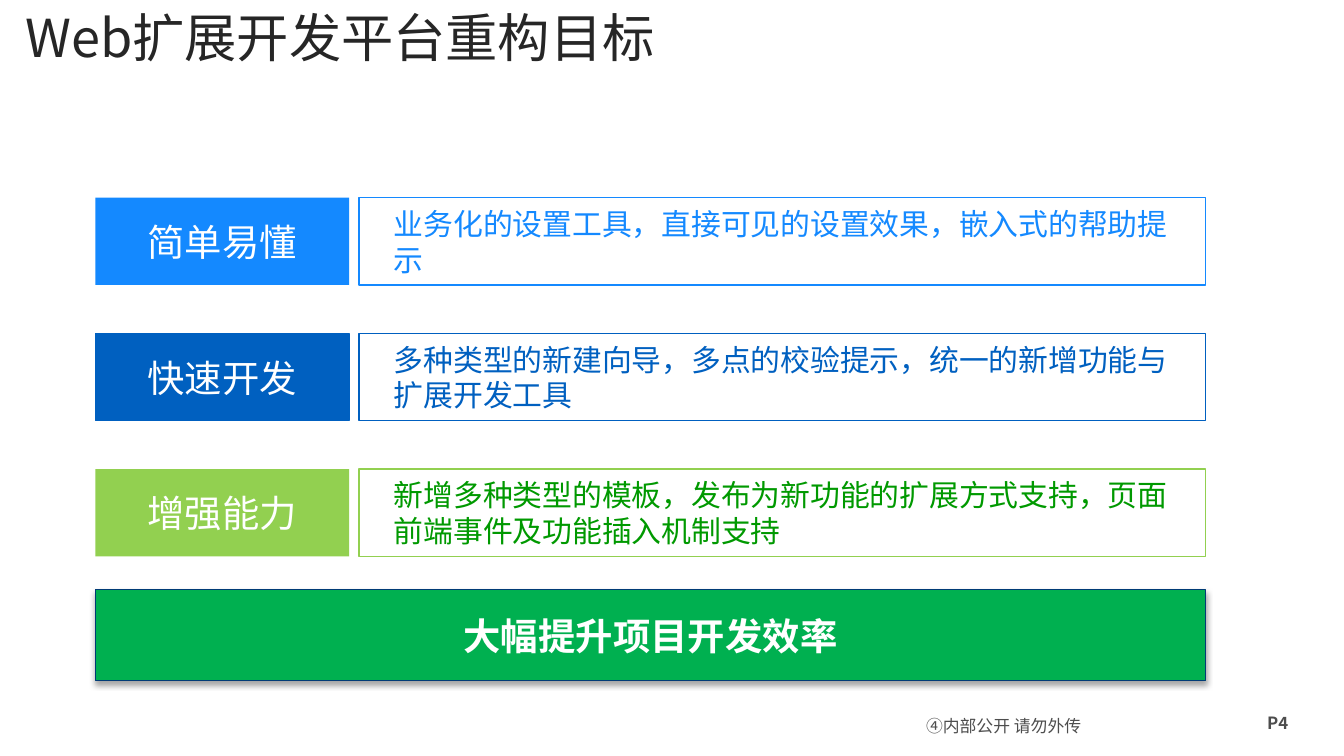
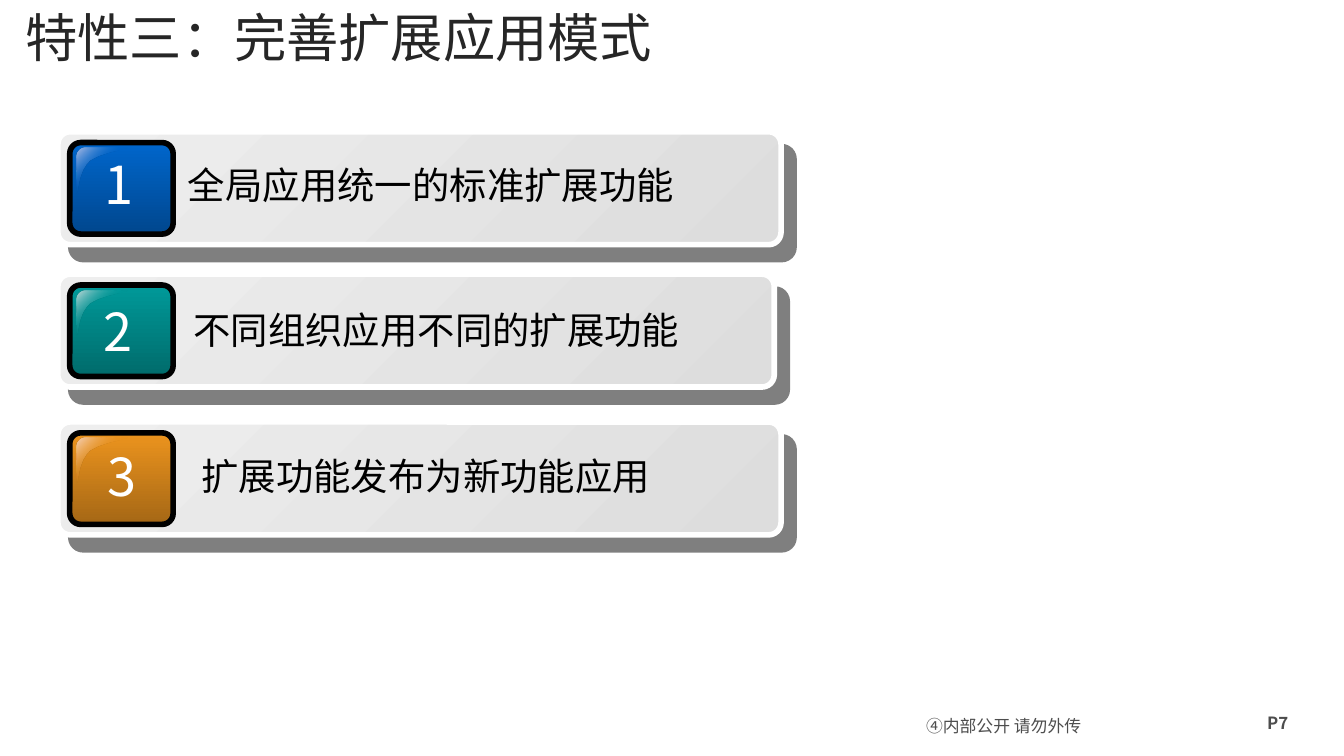
from lxml.etree import SubElement
from pptx import Presentation
from pptx.dml.color import RGBColor
from pptx.enum.shapes import MSO_SHAPE
from pptx.enum.text import MSO_ANCHOR, MSO_AUTO_SIZE, PP_ALIGN
from pptx.oxml.ns import qn
from pptx.util import Pt

FONT = "Noto Sans CJK SC"
COLORS = {
    "title": "262626", "footer": "4D4D4D", "white": "FFFFFF", "black": "000000",
    "sky": "1489FF", "blue": "0060C0", "lime": "92D050", "green": "009900",
    "banner": "00B050", "banner_edge": "003B76",
    "bar_light": "EEEEEE", "bar_dark": "DDDDDD",
    "one": "0066CC", "one_dark": "00478E", "one_gloss": "B5C0E5",
    "two": "009999", "two_dark": "006B6B", "two_gloss": "C9DBDB",
    "three": "EC941E", "three_dark": "A56715", "three_gloss": "F6D4BF",
}
FOOTER = "④内部公开 请勿外传"

GOALS_TITLE = "Web扩展开发平台重构目标"
GOALS = [
    ("简单易懂", "业务化的设置工具，直接可见的设置效果，嵌入式的帮助提示", "sky", "sky", None),
    ("快速开发", "多种类型的新建向导，多点的校验提示，统一的新增功能与扩展开发工具",
     "blue", "blue", "blue"),
    ("增强能力", "新增多种类型的模板，发布为新功能的扩展方式支持，页面前端事件及功能插入机制支持",
     "lime", "green", None),
]
GOALS_RESULT = "大幅提升项目开发效率"
GOAL_TOP, GOAL_STEP, GOAL_HEIGHT = 105.9, 72.7, 46.8

MODES_TITLE = "特性三：完善扩展应用模式"
MODES = [
    {"text": "全局应用统一的标准扩展功能", "color": "one", "top": 70.6, "width": 387.4,
     "number_box": (49, 7.2, 28.8, 41), "text_box": (93.6, 13)},
    {"text": "不同组织应用不同的扩展功能", "color": "two", "top": 146.9, "width": 383.8,
     "number_box": (48.2, 10.1, 35.3, 41), "text_box": (96.5, 14.4)},
    {"text": "扩展功能发布为新功能应用", "color": "three", "top": 226.1, "width": 387.4,
     "number_box": (50.4, 8.6, 25.9, 41), "text_box": (100.8, 13)},
]
GLOSS_START = (5, 0)
GLOSS_CURVES = [
    ((2.2, 0), (0, 2.2), (0, 5)),
    ((0, 11.5), (0, 18), (0, 24.5)),
    ((1.4, 25.2), (0.7, 13), (7.2, 7.2)),
    ((14.4, 2.2), (27.4, 1.4), (27.4, 0)),
]
CURVE_STEPS = 10


def rgb(name):
    return RGBColor.from_string(COLORS[name])


def write(shape, text, size, color, bold=False, align=PP_ALIGN.LEFT,
          anchor=MSO_ANCHOR.TOP, wrap=True, indent=0):
    frame = shape.text_frame
    frame.text = text
    frame.word_wrap = wrap
    frame.auto_size = MSO_AUTO_SIZE.NONE
    frame.vertical_anchor = anchor
    paragraph = frame.paragraphs[0]
    paragraph.alignment = align
    if indent:
        paragraph._p.get_or_add_pPr().set("marL", str(Pt(indent)))
    for run in paragraph.runs:
        run.font.size = Pt(size)
        run.font.bold = bold
        run.font.color.rgb = rgb(color)
        run.font.name = FONT
        SubElement(run._r.get_or_add_rPr(), qn("a:ea"), typeface=FONT)
    return paragraph


def add_text(slide, box, text, size, color, **options):
    shape = slide.shapes.add_textbox(*map(Pt, box))
    return shape, write(shape, text, size, color, **options)


def add_box(slide, box, fill=None, line=None, line_width=0.75,
            preset=MSO_SHAPE.RECTANGLE):
    shape = slide.shapes.add_shape(preset, *map(Pt, box))
    shape.shadow.inherit = False
    if fill:
        shape.fill.solid()
        shape.fill.fore_color.rgb = rgb(fill)
    else:
        shape.fill.background()
    if line:
        shape.line.color.rgb = rgb(line)
        shape.line.width = Pt(line_width)
    else:
        shape.line.fill.background()
    return shape


def set_gradient(shape, stops, angle):
    shape.fill.gradient()
    gradient = shape._element.spPr.find(qn("a:gradFill"))
    for child in list(gradient):
        gradient.remove(child)
    stop_list = SubElement(gradient, qn("a:gsLst"))
    for position, color, alpha in stops:
        stop = SubElement(stop_list, qn("a:gs"), pos=str(position * 1000))
        value = SubElement(stop, qn("a:srgbClr"), val=COLORS[color])
        if alpha < 100:
            SubElement(value, qn("a:alpha"), val=str(alpha * 1000))
    SubElement(gradient, qn("a:lin"), ang=str(angle * 60000), scaled="0")


def set_shadow(shape, alpha, blur, distance, angle):
    effects = shape._element.spPr.find(qn("a:effectLst"))
    shadow = SubElement(effects, qn("a:outerShdw"), blurRad=str(Pt(blur)),
                        dist=str(Pt(distance)), dir=str(angle * 60000),
                        algn="ctr", rotWithShape="0")
    value = SubElement(shadow, qn("a:srgbClr"), val=COLORS["black"])
    SubElement(value, qn("a:alpha"), val=str(alpha * 1000))


def add_slide(presentation, title, page):
    slide = presentation.slides.add_slide(presentation.slide_layouts[5])
    heading = slide.shapes.title
    heading.left, heading.top, heading.width, heading.height = map(Pt, (6.5, 2.2, 359.3, 34.6))
    write(heading, title, 28, "title", anchor=MSO_ANCHOR.MIDDLE)
    notice, paragraph = add_text(slide, (490.3, 379.4, 127.4, 19.4), FOOTER, 9, "footer",
                                 align=PP_ALIGN.JUSTIFY)
    paragraph.line_spacing = Pt(14)
    frame = notice.text_frame
    frame.margin_left = frame.margin_right = Pt(5.8)
    frame.margin_top = frame.margin_bottom = Pt(0.7)
    add_text(slide, (671.8, 378, 40.3, 18), page, 9, "footer", bold=True)
    return slide


def add_goals(presentation):
    slide = add_slide(presentation, GOALS_TITLE, "P4")
    for index, (label, detail, color, detail_color, edge) in enumerate(GOALS):
        top = GOAL_TOP + index * GOAL_STEP
        name_box = add_box(slide, (51.1, top, 136, GOAL_HEIGHT), color, edge)
        write(name_box, label, 20, "white", align=PP_ALIGN.CENTER, anchor=MSO_ANCHOR.MIDDLE)
        detail_box = add_box(slide, (192.4, top, 453.5, GOAL_HEIGHT), line=color)
        write(detail_box, detail, 16, detail_color, anchor=MSO_ANCHOR.MIDDLE, indent=11.5)
    banner = add_box(slide, (51.1, 316, 594.8, 48.7), "banner", "banner_edge")
    set_shadow(banner, 35, 3.1, 1.8, 90)
    write(banner, GOALS_RESULT, 20, "white", bold=True, align=PP_ALIGN.CENTER,
          anchor=MSO_ANCHOR.MIDDLE)


def curve_points(start, curves):
    for first, second, end in curves:
        for step in range(1, CURVE_STEPS + 1):
            t = step / CURVE_STEPS
            weights = ((1 - t) ** 3, 3 * t * (1 - t) ** 2, 3 * t * t * (1 - t), t ** 3)
            corners = (start, first, second, end)
            yield tuple(sum(w * corner[axis] for w, corner in zip(weights, corners))
                        for axis in (0, 1))
        start = end


def add_gloss(slide, left, top, color):
    def place(point):
        return Pt(left + point[0]), Pt(top + point[1])

    builder = slide.shapes.build_freeform(*place(GLOSS_START))
    builder.add_line_segments([place(point) for point in curve_points(GLOSS_START, GLOSS_CURVES)])
    gloss = builder.convert_to_shape()
    gloss.shadow.inherit = False
    gloss.line.fill.background()
    edge = color + "_gloss"
    set_gradient(gloss, [(0, edge, 100), (50, color, 0), (100, edge, 100)], 45)


def add_rounded(slide, box, line, radius, start, end, angle):
    shape = add_box(slide, box, line=line, line_width=3, preset=MSO_SHAPE.ROUNDED_RECTANGLE)
    shape.adjustments[0] = radius
    set_gradient(shape, [(0, start, 100), (100, end, 100)], angle)
    return shape


def add_modes(presentation):
    slide = add_slide(presentation, MODES_TITLE, "P7")
    for number, mode in enumerate(MODES, 1):
        top, color = mode["top"], mode["color"]
        bar = add_rounded(slide, (31, top, mode["width"], 60.5), "white", 0.109,
                          "bar_light", "bar_dark", 45)
        set_shadow(bar, 50, 0, 10.6, 49)
        add_rounded(slide, (37.4, top + 5.8, 55.4, 49), "black", 0.119,
                    color, color + "_dark", 90)
        add_gloss(slide, 41, top + 8.6, color)
        left, offset, width, height = mode["number_box"]
        add_text(slide, (left, top + offset, width, height), str(number), 28, "white",
                 wrap=False)
        left, offset = mode["text_box"]
        add_text(slide, (left, top + offset, 321.8, 31.7), mode["text"], 20, "black")


def main():
    presentation = Presentation()
    presentation.slide_width, presentation.slide_height = Pt(720), Pt(405)
    add_goals(presentation)
    add_modes(presentation)
    presentation.save("out.pptx")


if __name__ == "__main__":
    main()
